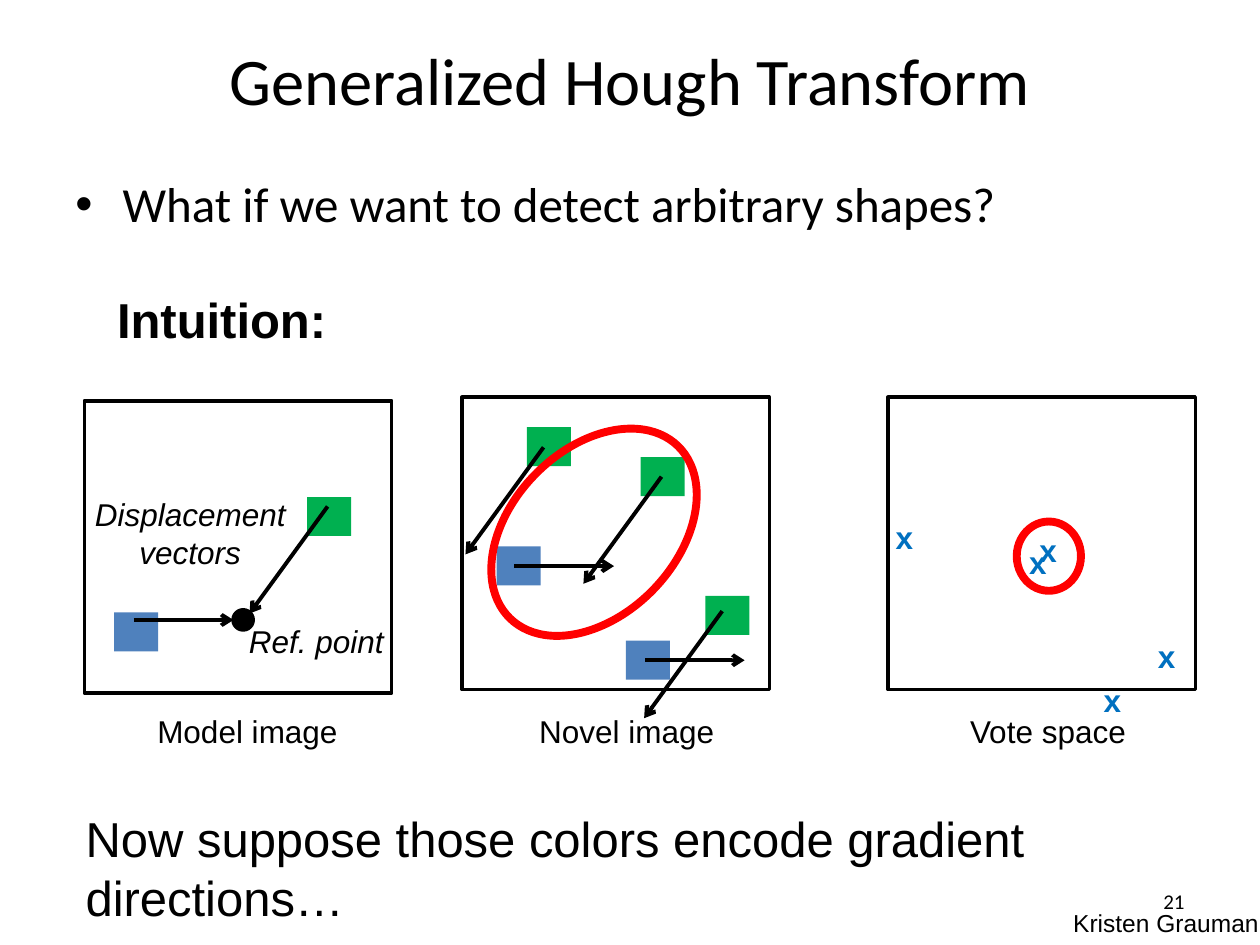
from dataclasses import dataclass

from lxml.etree import SubElement
from pptx import Presentation
from pptx.dml.color import RGBColor
from pptx.enum.shapes import MSO_CONNECTOR, MSO_SHAPE
from pptx.enum.text import MSO_ANCHOR, PP_ALIGN
from pptx.oxml.ns import qn
from pptx.util import Pt

BLACK, RED, GREEN, BLUE, VOTE_BLUE = "000000", "FF0000", "00B050", "4F81BD", "0070C0"
PANEL_W, PANEL_H = 175.7, 167
PATCH_W, PATCH_H = 25.2, 22.3
DISPLACEMENTS = {GREEN: (-44.6, 61.2), BLUE: (56.9, 0)}


@dataclass
class Label:
    text: str
    left: float
    top: float
    width: float
    height: float
    size: float = 18
    font: str = "Arial"
    color: str = BLACK
    bold: bool = False
    italic: bool = False
    align: PP_ALIGN = PP_ALIGN.LEFT
    anchor: MSO_ANCHOR = MSO_ANCHOR.TOP
    wrap: bool = True
    bullet: bool = False


@dataclass
class Feature:
    """A colored patch and the start of its displacement vector."""
    color: str
    left: float
    top: float
    start_x: float
    start_y: float


def rgb(value: str) -> RGBColor:
    return RGBColor.from_string(value)


def add_label(slide, label: Label) -> None:
    box = slide.shapes.add_textbox(
        Pt(label.left), Pt(label.top), Pt(label.width), Pt(label.height))
    frame = box.text_frame
    frame.text = label.text
    frame.word_wrap = label.wrap
    frame.vertical_anchor = label.anchor
    paragraph = frame.paragraphs[0]
    paragraph.alignment = label.align
    if label.bullet:
        properties = paragraph._p.get_or_add_pPr()
        properties.set("marL", str(Pt(27)))
        properties.set("indent", str(-Pt(27)))
        SubElement(properties, qn("a:buFont"), typeface="Arial")
        SubElement(properties, qn("a:buChar"), char="•")
    for run in paragraph.runs:
        run.font.size = Pt(label.size)
        run.font.name = label.font
        run.font.bold = label.bold
        run.font.italic = label.italic
        run.font.color.rgb = rgb(label.color)


def add_figure(slide, preset: MSO_SHAPE, left: float, top: float, width: float,
               height: float, fill: str = "", line: str = "",
               weight: float = 2, rotation: float = 0) -> None:
    figure = slide.shapes.add_shape(preset, Pt(left), Pt(top), Pt(width), Pt(height))
    figure.shadow.inherit = False
    figure.rotation = rotation
    if fill:
        figure.fill.solid()
        figure.fill.fore_color.rgb = rgb(fill)
    else:
        figure.fill.background()
    if line:
        figure.line.color.rgb = rgb(line)
        figure.line.width = Pt(weight)
    else:
        figure.line.fill.background()


def add_panel(slide, left: float, top: float) -> None:
    add_figure(slide, MSO_SHAPE.RECTANGLE, left, top, PANEL_W, PANEL_H, line=BLACK)


def add_vector(slide, feature: Feature) -> None:
    dx, dy = DISPLACEMENTS[feature.color]
    vector = slide.shapes.add_connector(
        MSO_CONNECTOR.STRAIGHT, Pt(feature.start_x), Pt(feature.start_y),
        Pt(feature.start_x + dx), Pt(feature.start_y + dy))
    vector.line.color.rgb = rgb(BLACK)
    vector.line.width = Pt(2.25)
    SubElement(vector.line._get_or_add_ln(), qn("a:tailEnd"), type="arrow")
    SubElement(vector._element.spPr, qn("a:effectLst"))


def add_features(slide, features: list[Feature]) -> None:
    for feature in features:
        add_figure(slide, MSO_SHAPE.RECTANGLE, feature.left, feature.top,
                   PATCH_W, PATCH_H, fill=feature.color)
    for feature in features:
        add_vector(slide, feature)


MODEL_FEATURES = [
    Feature(BLUE, 65.2, 350, 76.5, 354.3),
    Feature(GREEN, 175.5, 284, 187.2, 289.4),
]
NOVEL_FEATURES = [
    Feature(GREEN, 301, 244, 310.6, 255.6),
    Feature(GREEN, 366, 261.2, 378, 272.4),
    Feature(BLUE, 283.8, 312.2, 294, 323.5),
    Feature(BLUE, 357.6, 366, 368.6, 377.3),
    Feature(GREEN, 403, 340.5, 412.7, 349.2),
]
VOTES = [(581, 306.7), (586.8, 300.2), (504.7, 292.3), (623.5, 385.9), (654.5, 360.7)]

LABELS = [
    Label("Generalized Hough Transform", 0, 0, 720, 90, 38, "Calibri",
          align=PP_ALIGN.CENTER, anchor=MSO_ANCHOR.MIDDLE),
    Label("What if we want to detect arbitrary shapes?", 36, 95.8, 648, 62.6, 28,
          "Calibri", bullet=True),
    Label("Intuition:", 59.8, 162, 158.4, 41, 28, bold=True),
    Label("Model image", 82.8, 403.2, 118.8, 28.8, wrap=False),
    Label("Novel image", 301, 403.2, 115.2, 28.8, wrap=False),
    Label("Vote space", 547.2, 403.2, 104.4, 28.8, wrap=False),
    Label("Displacement vectors", 43.2, 279.4, 131, 51.1, italic=True,
          align=PP_ALIGN.CENTER),
    Label("Ref. point", 115.2, 352, 131, 28.8, italic=True, align=PP_ALIGN.CENTER),
    Label("Now suppose those colors encode gradient directions…",
          41.8, 458.6, 677.5, 74.9, 28),
    Label("Kristen Grauman", 606.2, 515.5, 144, 24.5, 14),
    Label("21", 516.2, 500.4, 167.8, 28.8, 12, "Calibri",
          align=PP_ALIGN.RIGHT, anchor=MSO_ANCHOR.MIDDLE),
]


def main() -> None:
    deck = Presentation()
    deck.slide_width, deck.slide_height = Pt(720), Pt(540)
    slide = deck.slides.add_slide(deck.slide_layouts[6])

    # Model image: patches pointing at the reference point
    add_panel(slide, 48.2, 229)
    add_figure(slide, MSO_SHAPE.OVAL, 133.2, 348.5, 11.5, 11.5, fill=BLACK, line=BLACK)
    add_features(slide, MODEL_FEATURES)

    # Novel image: the same vectors cast from every matching patch
    add_panel(slide, 264, 227)
    add_features(slide, NOVEL_FEATURES)
    add_figure(slide, MSO_SHAPE.OVAL, 292.3, 235.4, 94.3, 137.5,
               line=RED, weight=4.5, rotation=44.3)

    # Vote space: votes and the winning cluster
    add_panel(slide, 507.4, 227)
    for left, top in VOTES:
        add_label(slide, Label("x", left, top, 70.6, 28.8, color=VOTE_BLUE, bold=True))
    add_figure(slide, MSO_SHAPE.OVAL, 581, 298, 36.7, 39.6, line=RED, weight=4.5)

    # Title, statements and captions
    for label in LABELS:
        add_label(slide, label)

    deck.save("out.pptx")


if __name__ == "__main__":
    main()
